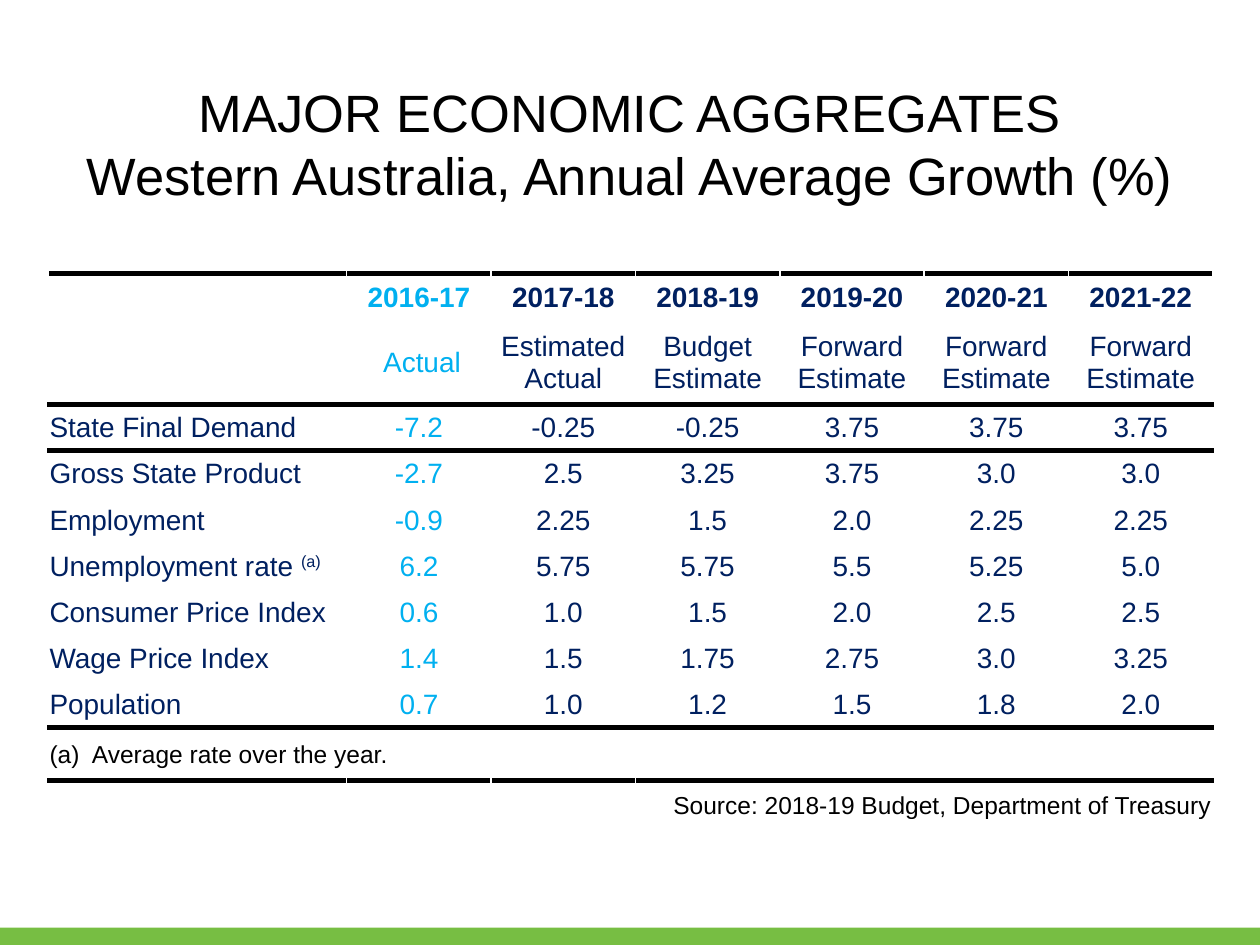
"""Build a slide with a table of major economic aggregates."""
from lxml.etree import SubElement
from pptx import Presentation
from pptx.dml.color import RGBColor
from pptx.enum.shapes import MSO_SHAPE
from pptx.enum.text import MSO_ANCHOR, PP_ALIGN
from pptx.oxml import parse_xml
from pptx.oxml.ns import nsdecls, qn
from pptx.util import Cm, Pt

BLACK, NAVY, SKY = "000000", "002060", "00B0F0"


def paint(part, tint):
    part.solid()
    part.fore_color.rgb = RGBColor.from_string(tint)


def style(para, size, tint, align, bold=False):
    para.alignment = align
    for run in para.runs:
        run.font.name = "Arial"
        run.font.size = Pt(size)
        run.font.bold = bold
        paint(run.font.fill, tint)


deck = Presentation()
deck.slide_width, deck.slide_height = Cm(25.4), Cm(19.05)
slide = deck.slides.add_slide(deck.slide_layouts[6])

bar = slide.shapes.add_shape(MSO_SHAPE.RECTANGLE, Cm(0), Cm(18.7), Cm(25.4), Cm(0.35))
bar.shadow.inherit = False
paint(bar.fill, "77BE43")
bar.line.fill.background()

title = slide.shapes.add_textbox(Cm(1.27), Cm(1.3), Cm(22.86), Cm(3.18))
frame = title.text_frame
frame.word_wrap = True
frame.vertical_anchor = MSO_ANCHOR.MIDDLE
frame.text = "MAJOR ECONOMIC AGGREGATES\vWestern Australia, Annual Average Growth (%)"
style(frame.paragraphs[0], 30, BLACK, PP_ALIGN.CENTER)

rows = [
    ["", "2016-17", "2017-18", "2018-19", "2019-20", "2020-21", "2021-22"],
    ["", " Actual", "Estimated\vActual", "Budget Estimate", "Forward Estimate",
     "Forward Estimate", "Forward\vEstimate"],
    ["State Final Demand", "-7.2", "-0.25", "-0.25", "3.75", "3.75", "3.75"],
    ["Gross State Product", "-2.7", "2.5", "3.25", "3.75", "3.0", "3.0"],
    ["Employment", "-0.9", "2.25", "1.5", "2.0", "2.25", "2.25"],
    ["Unemployment rate ", "6.2", "5.75", "5.75", "5.5", "5.25", "5.0"],
    ["Consumer Price Index", "0.6", "1.0", "1.5", "2.0", "2.5", "2.5"],
    ["Wage Price Index", "1.4", "1.5", "1.75", "2.75", "3.0", "3.25"],
    ["Population", "0.7", "1.0", "1.2", "1.5", "1.8", "2.0"],
    ["(a)  Average rate over the year."] + [""] * 6,
    ["", "", "", "Source: 2018-19 Budget, Department of Treasury", "", "", ""],
]
wides = [6.02] + [2.91] * 6
highs = [0.94, 1.7] + [0.93] * 7 + [1.07, 0.74]
rules = {0: "lnT", 1: "lnB", 2: "lnT", 8: "lnB", 9: "lnT"}

grid = slide.shapes.add_table(
    len(rows), len(wides), Cm(0.97), Cm(5.51), Cm(sum(wides)), Cm(sum(highs))
).table
grid.first_row = grid.horz_banding = False
for col, wide in zip(grid.columns, wides):
    col.width = Cm(wide)
for row, high in zip(grid.rows, highs):
    row.height = Cm(high)

for r, texts in enumerate(rows):
    for c, text in enumerate(texts):
        cell = grid.cell(r, c)
        paint(cell.fill, "FFFFFF")
        cell.margin_left = cell.margin_right = cell.margin_top = Cm(0.03)
        cell.margin_bottom = Cm(0)
        cell.vertical_anchor = MSO_ANCHOR.BOTTOM if r == 10 else MSO_ANCHOR.MIDDLE
        if r in rules:
            line = parse_xml(f'<a:{rules[r]} {nsdecls("a")} w="{Pt(3)}"/>')
            fill = SubElement(line, qn("a:solidFill"))
            SubElement(fill, qn("a:srgbClr"), val=BLACK)
            cell._tc.get_or_add_tcPr().insert(0, line)
        if not text:
            continue
        cell.text_frame.text = text
        para = cell.text_frame.paragraphs[0]
        if r == 5 and c == 0:
            mark = para.add_run()
            mark.text = "(a)"
            mark._r.get_or_add_rPr().set("baseline", "30000")
        if r > 8:
            style(para, 14, BLACK, PP_ALIGN.RIGHT if c else PP_ALIGN.LEFT)
        else:
            style(para, 16, SKY if c == 1 else NAVY,
                  PP_ALIGN.CENTER if c else PP_ALIGN.LEFT, r == 0)

grid.cell(9, 0).merge(grid.cell(9, 6))
grid.cell(10, 3).merge(grid.cell(10, 6))

deck.save("out.pptx")
